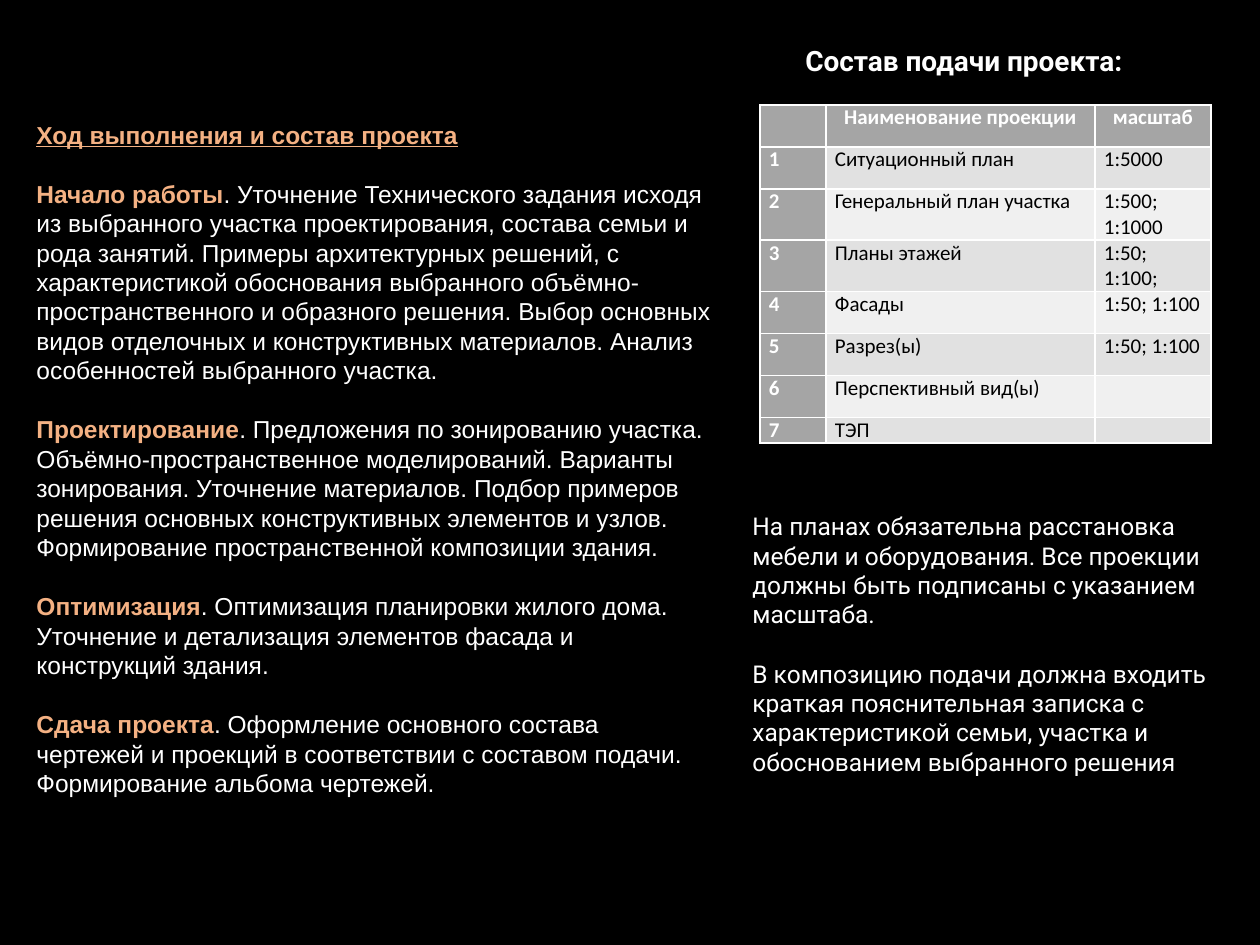
from lxml.etree import SubElement
from pptx import Presentation
from pptx.dml.color import RGBColor
from pptx.enum.text import MSO_ANCHOR, PP_ALIGN
from pptx.oxml.ns import qn
from pptx.util import Pt

PX = 914400 // 126
WHITE, PEACH, GRAY = "FFFFFF", "F4B183", "A5A5A5"


def style(font, name, size, color, bold=False):
    font.name, font.size, font.bold = name, Pt(size), bold
    font.color.rgb = RGBColor.from_string(color)


def add_box(left, top, width, height):
    """Add a wrapping text box, in px, and return its text frame."""
    box = slide.shapes.add_textbox(left * PX, top * PX, width * PX, height * PX)
    box.text_frame.word_wrap = True
    return box.text_frame


deck = Presentation()
deck.slide_width, deck.slide_height = 1260 * PX, 945 * PX
slide = deck.slides.add_slide(deck.slide_layouts[6])
slide.background.fill.solid()
slide.background.fill.fore_color.rgb = RGBColor.from_string("000000")

# Table of views; the default table style draws the white grid
rows = [
    ("", "Наименование проекции", "масштаб"),
    ("1", "Ситуационный план", "1:5000"),
    ("2", "Генеральный план участка", "1:500; 1:1000"),
    ("3", "Планы этажей", "1:50; 1:100;"),
    ("4", "Фасады", "1:50; 1:100"),
    ("5", "Разрез(ы)", "1:50; 1:100"),
    ("6", "Перспективный вид(ы)", ""),
    ("7", "ТЭП", ""),
]
widths = [66, 269, 116]
heights = [42, 42, 48, 48, 42, 42, 42, 24]
table = slide.shapes.add_table(
    len(rows), len(widths), 760 * PX, 105 * PX, sum(widths) * PX, sum(heights) * PX
).table
table.first_col = True
for col, width in zip(table.columns, widths):
    col.width = width * PX
for r, (row, height) in enumerate(zip(rows, heights)):
    table.rows[r].height = height * PX
    for c, text in enumerate(row):
        cell = table.cell(r, c)
        head = r == 0 or c == 0
        cell.margin_left = cell.margin_right = 9 * PX
        cell.margin_top = cell.margin_bottom = 0
        cell.fill.solid()
        fill = GRAY if head else "E1E1E1" if r % 2 else "F0F0F0"
        cell.fill.fore_color.rgb = RGBColor.from_string(fill)
        para = cell.text_frame.paragraphs[0]
        para.alignment = PP_ALIGN.CENTER if r == 0 else PP_ALIGN.LEFT
        if text:
            run = para.add_run()
            run.text = text
            style(run.font, "Calibri", 12, WHITE if head else "000000", head)
        else:  # keeps an empty cell from stretching its row
            SubElement(para._p, qn("a:endParaRPr"), sz="1200")

# Course of work
stages = [
    ("Ход выполнения и состав проекта", ""),
    ("Начало работы", ". Уточнение Технического задания исходя из выбранного участка "
     "проектирования, состава семьи и рода занятий. Примеры архитектурных решений, "
     "с характеристикой обоснования выбранного объёмно-пространственного и образного "
     "решения. Выбор основных видов отделочных и конструктивных материалов. Анализ "
     "особенностей выбранного участка."),
    ("Проектирование", ". Предложения по зонированию участка. Объёмно-пространственное "
     "моделирований. Варианты зонирования. Уточнение материалов. Подбор примеров "
     "решения основных конструктивных элементов и узлов. Формирование "
     "пространственной композиции здания."),
    ("Оптимизация", ". Оптимизация планировки жилого дома. Уточнение и детализация "
     "элементов фасада и конструкций здания."),
    ("Сдача проекта", ". Оформление основного состава чертежей и проекций в "
     "соответствии с составом подачи. Формирование альбома чертежей."),
]
frame = add_box(24, 103, 700, 711)
frame.vertical_anchor = MSO_ANCHOR.MIDDLE
for i, (name, text) in enumerate(stages):
    para = frame.add_paragraph() if i else frame.paragraphs[0]
    para.space_before = Pt(17 if i else 0)
    run = para.add_run()
    run.text = name
    style(run.font, "Arial", 14, PEACH, True)
    if text:
        run = para.add_run()
        run.text = text
        style(run.font, "Arial", 14, WHITE)
    else:
        run.font.underline = True

# Heading over the table
para = add_box(793, 37, 467, 47).paragraphs[0]
para.text = "Состав подачи проекта:"
style(para.font, "Roboto", 16, WHITE, True)

# Notes under the table
notes = [
    "На планах обязательна расстановка мебели и оборудования. Все проекции должны "
    "быть подписаны с указанием масштаба.",
    "В композицию подачи должна входить краткая пояснительная записка с "
    "характеристикой семьи, участка и обоснованием выбранного решения",
]
frame = add_box(740, 505, 509, 289)
for i, text in enumerate(notes):
    para = frame.add_paragraph() if i else frame.paragraphs[0]
    para.text = text
    para.space_before = Pt(17 if i else 0)
    style(para.font, "Roboto", 14, WHITE)

deck.save("out.pptx")
